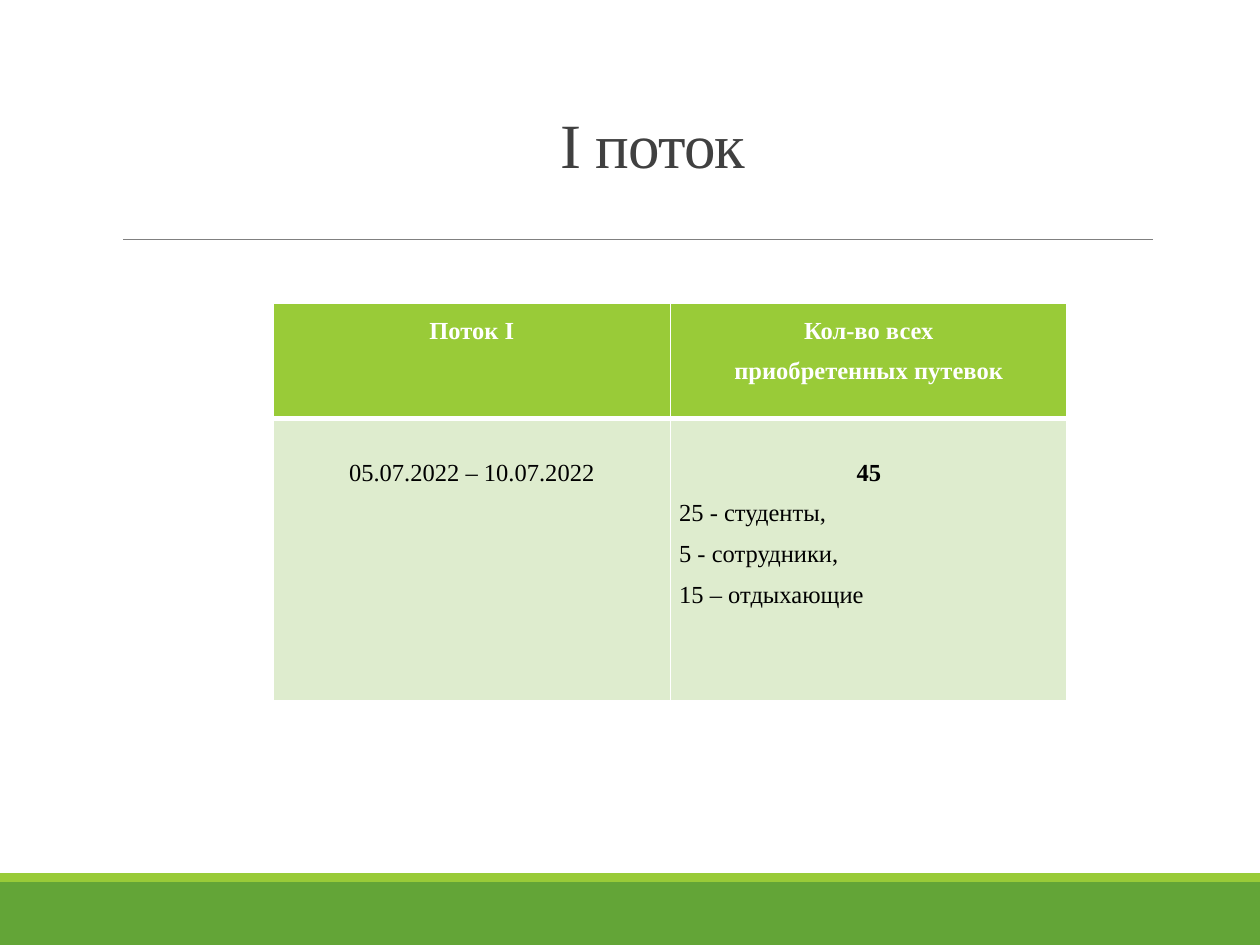
from lxml.etree import SubElement
from pptx import Presentation
from pptx.dml.color import RGBColor
from pptx.enum.shapes import MSO_CONNECTOR, MSO_SHAPE
from pptx.enum.text import MSO_ANCHOR, MSO_AUTO_SIZE, PP_ALIGN
from pptx.oxml.ns import qn
from pptx.util import Inches, Pt

GREEN = RGBColor(0x63, 0xA5, 0x37)
LIME = RGBColor(0x99, 0xCB, 0x38)
PALE = RGBColor(0xDE, 0xEC, 0xCE)
GRAY = RGBColor(0x80, 0x80, 0x80)
DARK = RGBColor(0x40, 0x40, 0x40)
BLACK = RGBColor(0, 0, 0)
WHITE = RGBColor(0xFF, 0xFF, 0xFF)

HEAD = [["Поток I"], ["Кол-во всех", "приобретенных путевок"]]
BODY = [
    ["05.07.2022 – 10.07.2022"],
    ["45", "25 - студенты,", "5 - сотрудники,", "15 – отдыхающие"],
]


class Deck:
    face = "Times New Roman"

    def __init__(self, slide):
        self.slide = slide

    def style(self, para, size, color, bold=False, align=PP_ALIGN.CENTER, space=1.5):
        font = para.font
        font.name, font.size, font.bold = self.face, Pt(size), bold
        font.color.rgb = color
        para.alignment = align
        para.line_spacing = space

    def band(self, top, height, color):
        band = self.slide.shapes.add_shape(
            MSO_SHAPE.RECTANGLE, 0, Inches(top), Inches(10), Inches(height))
        band.shadow.inherit = False
        band.fill.solid()
        band.fill.fore_color.rgb = color
        band.line.fill.background()

    def rule(self, left, right, top):
        rule = self.slide.shapes.add_connector(
            MSO_CONNECTOR.STRAIGHT, Inches(left), Inches(top), Inches(right), Inches(top))
        rule.line.color.rgb = GRAY
        rule.line.width = Pt(0.5)
        SubElement(rule._element.spPr, qn("a:effectLst"))

    def title(self, text):
        title = self.slide.shapes.title
        title.left, title.top = Inches(1.06), Inches(-0.11)
        title.width, title.height = Inches(8.25), Inches(2.19)
        frame = title.text_frame
        frame.text = text
        frame.auto_size = MSO_AUTO_SIZE.NONE
        frame.vertical_anchor = MSO_ANCHOR.BOTTOM
        frame.margin_bottom = Inches(0.64)
        para = frame.paragraphs[0]
        self.style(para, 36, DARK, space=0.85)
        para.runs[0]._r.get_or_add_rPr().set("spc", "-50")

    def edges(self, cell, widths):
        props = cell._tc.get_or_add_tcPr()
        for place, (side, width) in enumerate(widths.items()):
            edge = props.makeelement(qn(f"a:ln{side}"), {"w": str(Pt(width))})
            fill = SubElement(edge, qn("a:solidFill"))
            SubElement(fill, qn("a:srgbClr"), val=str(WHITE))
            props.insert(place, edge)

    def cell(self, cell, lines, fill, color, top, widths):
        cell.fill.solid()
        cell.fill.fore_color.rgb = fill
        cell.margin_left = cell.margin_right = Inches(0.07)
        cell.margin_top, cell.margin_bottom = Inches(top), 0
        cell.text = "\n".join(lines)
        for para in cell.text_frame.paragraphs:
            self.style(para, 14, color)
        self.edges(cell, widths)

    def table(self):
        table = self.slide.shapes.add_table(
            2, 2, Inches(2.17), Inches(2.41), Inches(6.3), Inches(3.15)).table
        table.rows[0].height, table.rows[1].height = Inches(0.91), Inches(2.24)
        for col, (head, body) in enumerate(zip(HEAD, BODY)):
            top, low = table.cell(0, col), table.cell(1, col)
            self.cell(top, head, LIME, WHITE, 0, {"L": 1, "R": 1, "T": 1, "B": 3})
            self.cell(low, body, PALE, BLACK, 0.22, {"L": 1, "R": 1, "T": 3, "B": 1})
            for para in top.text_frame.paragraphs:
                para.font.bold = True
        first, *rest = table.cell(1, 1).text_frame.paragraphs
        first.font.bold = True
        for para in rest:
            para.alignment = PP_ALIGN.LEFT


def main():
    show = Presentation()
    show.slide_width, show.slide_height = Inches(10), Inches(7.5)
    deck = Deck(show.slides.add_slide(show.slide_layouts[5]))
    deck.band(7, 0.5, GREEN)
    deck.band(6.93, 0.07, LIME)
    deck.rule(0.98, 9.15, 1.9)
    deck.title("I поток")
    deck.table()
    show.save("out.pptx")


if __name__ == "__main__":
    main()
